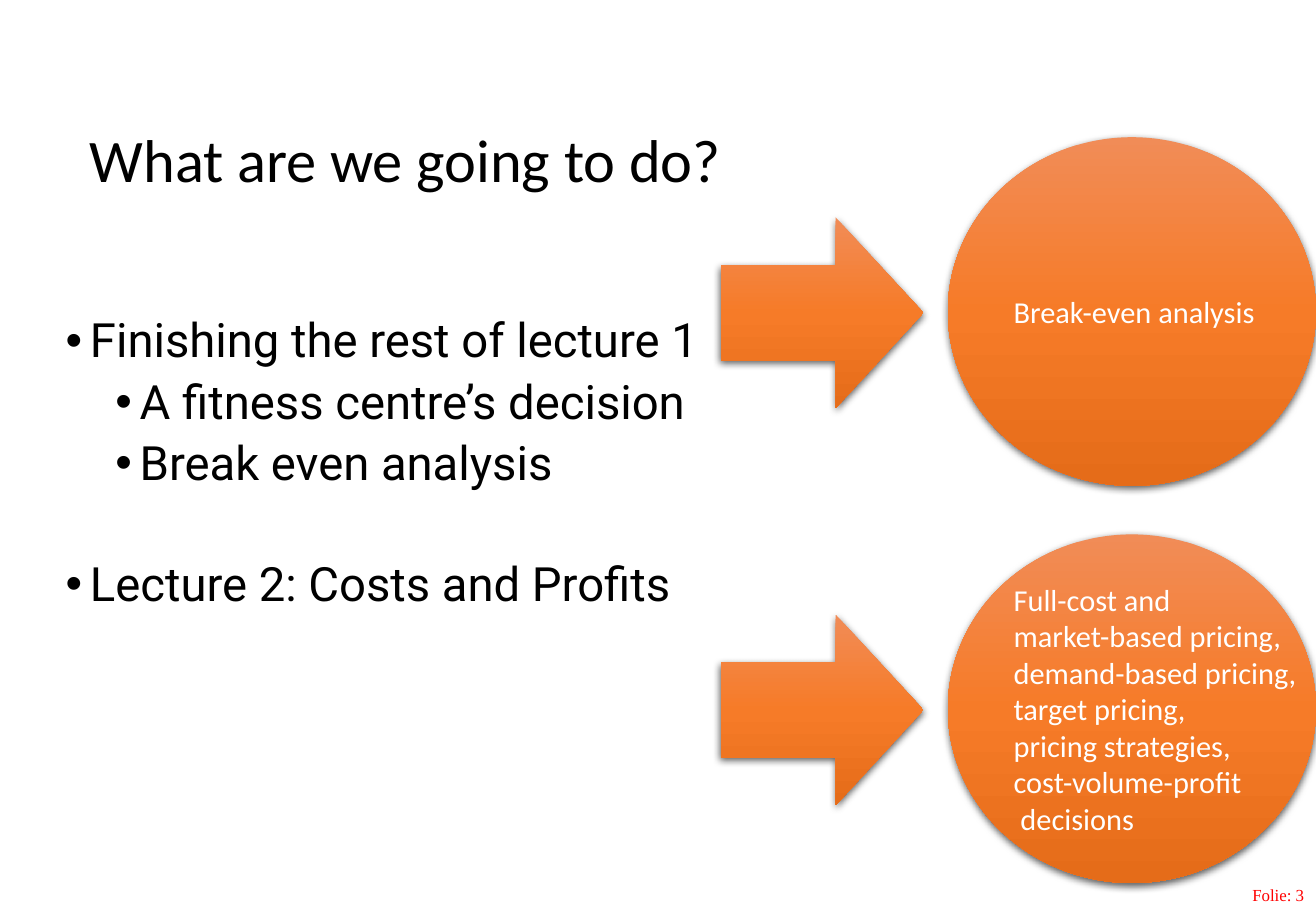
"""Builds the lecture overview slide with two arrow and circle pairs."""
from copy import deepcopy
from dataclasses import dataclass

from lxml import etree
from pptx import Presentation
from pptx.dml.color import RGBColor
from pptx.enum.shapes import MSO_SHAPE
from pptx.enum.text import MSO_ANCHOR, MSO_AUTO_SIZE, PP_ALIGN
from pptx.oxml.ns import qn
from pptx.util import Inches, Pt

ELLIPSE, ARROW = MSO_SHAPE.OVAL, MSO_SHAPE.RIGHT_ARROW
LEFT, RIGHT = PP_ALIGN.LEFT, PP_ALIGN.RIGHT
TOP, MIDDLE = MSO_ANCHOR.TOP, MSO_ANCHOR.MIDDLE
FIXED = MSO_AUTO_SIZE.NONE
ORANGES = ("F18C57", "F67B28", "E56C19")
PAIR_TOP, PAIR_STEP = 1.13, 3.27
BULLET_HANG = 0.2


@dataclass(frozen=True)
class Style:
    face: str
    size: float
    color: str


@dataclass(frozen=True)
class Item:
    text: str
    level: int = 0
    indent: float = 0.2
    before: float = 6


TITLE_STYLE = Style("Calibri", 35.8, "000000")
LIST_STYLE = Style("Roboto", 28, "000000")
TOPIC_STYLE = Style("Calibri", 18, "FFFFFF")
NUMBER_STYLE = Style("Times New Roman", 10, "FF0000")

AGENDA = (
    Item("Finishing the rest of lecture 1", before=0),
    Item("A fitness centre’s decision", 1, 0.61),
    Item("Break even analysis", 1, 0.61),
    Item("Lecture 2: Costs and Profits", before=41.5),
)
TOPICS = (
    ("Break-even analysis",),
    (
        "Full-cost and\vmarket-based pricing,",
        "demand-based pricing,\vtarget pricing,\vpricing strategies,"
        "\vcost-volume-profit\v decisions",
    ),
)


def rgb(color: str) -> RGBColor:
    """Turn a hex string into a colour."""
    return RGBColor.from_string(color)


def apply(target, values: dict) -> None:
    """Set every attribute named in values."""
    for name, value in values.items():
        setattr(target, name, value)


def place(shape, left: float, top: float, width: float, height: float) -> None:
    """Move and size a shape in inches."""
    apply(shape, {"left": Inches(left), "top": Inches(top),
                  "width": Inches(width), "height": Inches(height)})


def write(para, text: str, style: Style, **layout) -> None:
    """Fill a paragraph with styled text."""
    para.text = text
    apply(para, layout)
    for span in para.runs:
        apply(span.font, {"name": style.face, "size": Pt(style.size)})
        span.font.color.rgb = rgb(style.color)


def write_all(frame, texts: tuple, style: Style, **layout) -> None:
    """Write one paragraph for each text."""
    for index, text in enumerate(texts):
        para = frame.add_paragraph() if index else frame.paragraphs[0]
        write(para, text, style, **layout)


def add_bullet(para, indent: float) -> None:
    """Give a paragraph a hanging round bullet."""
    properties = para._p.get_or_add_pPr()
    properties.set("marL", str(Inches(indent)))
    properties.set("indent", str(-Inches(BULLET_HANG)))
    etree.SubElement(properties, qn("a:buFont"), typeface="Arial")
    etree.SubElement(properties, qn("a:buChar"), char="•")


def add_agenda(body) -> None:
    """Write the bulleted list into the body placeholder."""
    place(body, 0.5, 2.57, 5.43, 4.31)
    frame = body.text_frame
    margins = dict.fromkeys(
        ("margin_left", "margin_top", "margin_right", "margin_bottom"), Inches(0.04))
    apply(frame, {**margins, "auto_size": FIXED, "vertical_anchor": TOP})
    for index, item in enumerate(AGENDA):
        para = frame.add_paragraph() if index else frame.paragraphs[0]
        add_bullet(para, item.indent)
        write(para, item.text, LIST_STYLE, level=item.level, alignment=LEFT,
              line_spacing=0.9, space_before=Pt(item.before))


def add_orange_shape(group, kind, left: float, top: float, width: float, height: float):
    """Add a shape with an orange gradient and a soft shadow."""
    shape = group.shapes.add_shape(
        kind, Inches(left), Inches(top), Inches(width), Inches(height))
    shape.line.fill.background()
    shape.fill.gradient()
    shape.fill.gradient_angle = 270
    properties = shape._element.spPr
    stops = properties.find(".//" + qn("a:gsLst"))
    stops.insert(1, deepcopy(stops[0]))
    for index, (stop, color) in enumerate(zip(shape.fill.gradient_stops, ORANGES)):
        stop.position = index / 2
        stop.color.rgb = rgb(color)
    shape.shadow.inherit = False
    shadow = etree.SubElement(
        properties.find(qn("a:effectLst")), qn("a:outerShdw"), blurRad=str(Pt(4.5)),
        dist=str(Pt(1.5)), dir="5400000", algn="ctr", rotWithShape="0")
    black = etree.SubElement(shadow, qn("a:srgbClr"), val="000000")
    etree.SubElement(black, qn("a:alpha"), val="63000")
    return shape


def add_topic(slide, top: float, texts: tuple) -> None:
    """Add a circle of topics and the arrow that points to it."""
    group = slide.shapes.add_group_shape()
    circle = add_orange_shape(group, ELLIPSE, 7.8, top, 3.03, 2.87)
    apply(circle.text_frame, {"word_wrap": False, "vertical_anchor": MIDDLE})
    write_all(circle.text_frame, texts, TOPIC_STYLE, alignment=LEFT)
    arrow = add_orange_shape(group, ARROW, 5.93, top + 0.66, 1.67, 1.57)
    arrow.adjustments[0], arrow.adjustments[1] = 0.5, 0.46


def main() -> None:
    """Build and save the deck."""
    deck = Presentation()
    apply(deck, {"slide_width": Inches(10.83), "slide_height": Inches(7.5)})
    slide = deck.slides.add_slide(deck.slide_layouts[1])

    number = slide.shapes.add_textbox(
        Inches(7.31), Inches(7.23), Inches(3.52), Inches(0.27))
    number.text_frame.word_wrap = True
    write_all(number.text_frame, ("Folie: 3",), NUMBER_STYLE, alignment=RIGHT)

    title = slide.shapes.title
    place(title, 0.64, 0.72, 9.75, 1.25)
    apply(title.text_frame, {"auto_size": FIXED, "vertical_anchor": MIDDLE})
    write_all(title.text_frame, ("What are we going to do?",), TITLE_STYLE,
              alignment=LEFT, line_spacing=0.9)

    add_agenda(slide.placeholders[1])
    for index, texts in enumerate(TOPICS):
        add_topic(slide, PAIR_TOP + index * PAIR_STEP, texts)
    deck.save("out.pptx")


if __name__ == "__main__":
    main()
